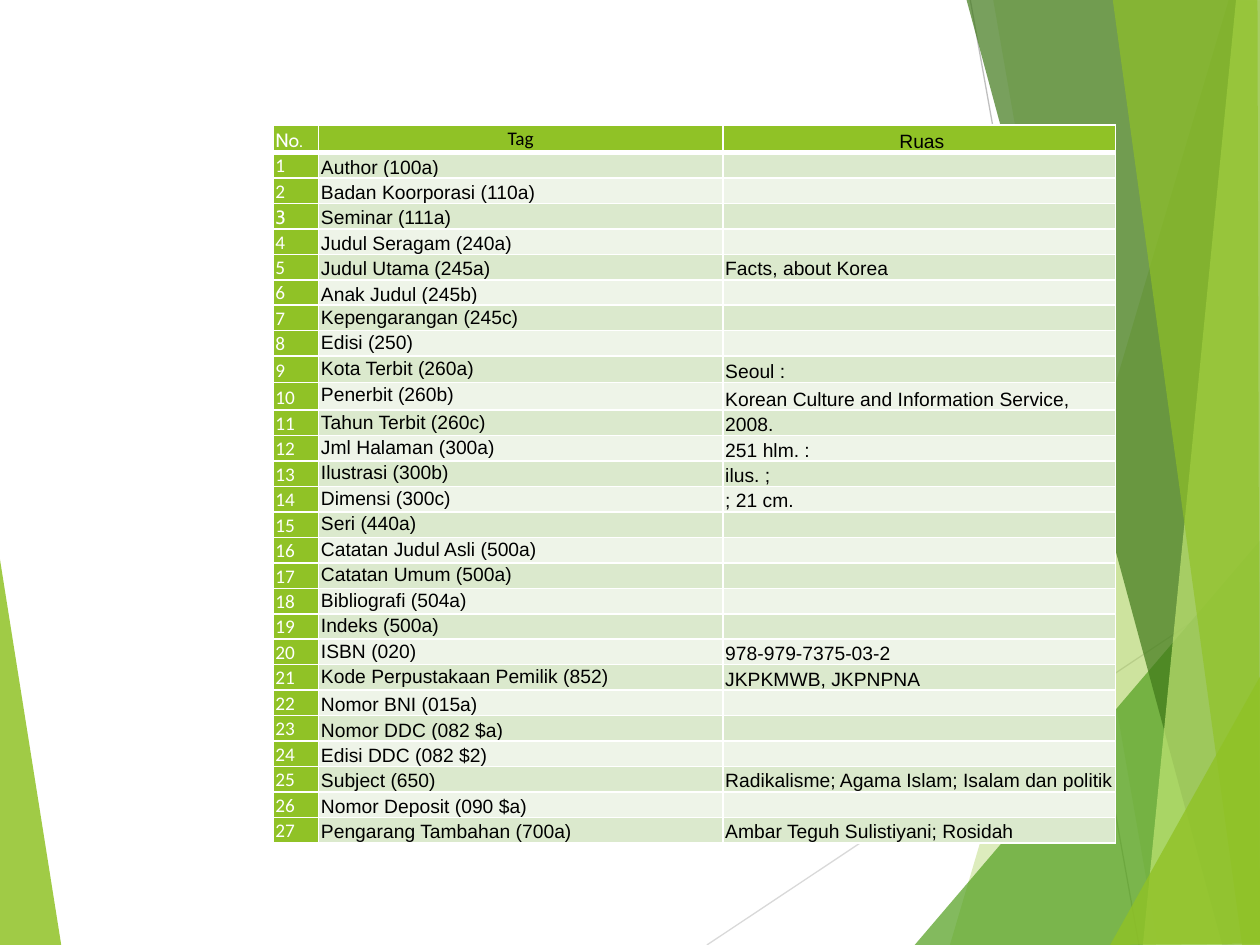
from lxml import etree
from pptx import Presentation
from pptx.dml.color import RGBColor
from pptx.enum import shapes, text
from pptx.oxml import ns
from pptx.util import Cm, Pt

GREEN, WHITE, BLACK = "90C226", "FFFFFF", "000000"
BANDS = ("DBE9CD", "EEF4E8")

# fill, opacity in percent, corners in cm
PANES = [
    (GREEN, 85, [(-0.02, 11.15), (1.24, 19.08), (-0.02, 19.05)]),
    (GREEN, 30, [(24.77, 0), (19.15, 19.05), (25.45, 19.08), (25.43, 0.02)]),
    (GREEN, 20, [(20.02, -0.02), (23.34, 19.05), (25.43, 19.05), (25.43, -0.02)]),
    ("54A021", 72, [(18.44, 19.05), (25.4, 10.9), (25.43, 19.05)]),
    ("3F7819", 70, [(19.48, -0.02), (24.64, 19.05), (25.43, 19.02), (25.43, -0.02)]),
    ("C0E474", 70, [(24.92, -0.02), (23.04, 19.05), (25.43, 19.05), (25.4, -0.02)]),
    (GREEN, 65, [(22.43, -0.02), (25.04, 19.05), (25.4, 19.05), (25.35, -0.02)]),
    (GREEN, 80, [(22.38, 19.05), (25.43, 13.59), (25.43, 19.02)]),
]
RAYS = [
    ("D9D9D9", (14.25, 19.05), (25.43, 11.61)),
    ("BFBFBF", (19.56, 0), (22.96, 19.05)),
]

HEAD = ("No.", "Tag", " Ruas")
TAGS = [
    "Author (100a)", "Badan Koorporasi (110a)", "Seminar (111a)",
    "Judul Seragam (240a)", "Judul Utama (245a)", "Anak Judul (245b)",
    "Kepengarangan (245c)", "Edisi (250)", "Kota Terbit (260a)",
    "Penerbit (260b)", "Tahun Terbit (260c)", "Jml Halaman (300a)",
    "Ilustrasi (300b)", "Dimensi (300c)", "Seri (440a)",
    "Catatan Judul Asli (500a)", "Catatan Umum (500a)", "Bibliografi (504a)",
    "Indeks (500a)", "ISBN (020)", "Kode Perpustakaan Pemilik (852)",
    "Nomor BNI (015a)", "Nomor DDC (082 $a)", "Edisi DDC (082 $2)",
    "Subject (650)", "Nomor Deposit (090 $a)", "Pengarang Tambahan (700a)",
]
FIELDS = {
    5: "Facts, about Korea",
    9: "Seoul :",
    10: "Korean Culture and Information Service,",
    11: "2008.",
    12: "251 hlm. :",
    13: "ilus. ;",
    14: "; 21 cm.",
    20: "978-979-7375-03-2",
    21: "JKPKMWB, JKPNPNA",
    25: "Radikalisme; Agama Islam; Isalam dan politik",
    27: "Ambar Teguh Sulistiyani; Rosidah",
}
COLS = (0.92, 8.15, 7.92)
HIGH = {0: 0.56, 9: 0.53, 10: 0.56}


def color(code):
    return RGBColor.from_string(code)


def child(node, tag, **attrs):
    return etree.SubElement(node, ns.qn("a:" + tag), attrs)


def pane(group, left, top, fill, alpha, points):
    spots = [(Cm(left + x), Cm(top + y)) for x, y in points]
    build = group.build_freeform(*spots[0])
    build.add_line_segments(spots[1:])
    shape = build.convert_to_shape()
    shape.shadow.inherit = False
    shape.fill.solid()
    shape.fill.fore_color.rgb = color(fill)
    tint = shape._element.spPr.find(".//" + ns.qn("a:srgbClr"))
    child(tint, "alpha", val=str(alpha * 1000))
    shape.line.fill.background()


def ray(group, left, top, tone, start, end):
    ends = [Cm(left + start[0]), Cm(top + start[1]), Cm(left + end[0]), Cm(top + end[1])]
    line = group.add_connector(shapes.MSO_CONNECTOR.STRAIGHT, *ends)
    line.line.color.rgb = color(tone)
    line.line.width = Pt(0.75)
    child(line._element.spPr, "effectLst")


def facets(slide, left, top):
    """Draw the translucent panes and fine rays behind the table."""
    group = slide.shapes.add_group_shape().shapes
    pane(group, left, top, *PANES[0])
    for item in RAYS:
        ray(group, left, top, *item)
    for item in PANES[1:]:
        pane(group, left, top, *item)


def border(cell, base):
    props = cell._tc.get_or_add_tcPr()
    for side, width in (("L", 1), ("R", 1), ("T", 1), ("B", base)):
        line = child(props, "ln" + side, w=str(Pt(width)))
        child(child(line, "solidFill"), "srgbClr", val=WHITE)


def style(cell, row, col):
    border(cell, 3 if row == 0 else 1)
    cell.fill.solid()
    green = row == 0 or col == 0
    cell.fill.fore_color.rgb = color(GREEN if green else BANDS[(row - 1) % 2])
    cell.margin_left = cell.margin_right = Cm(0.05)
    cell.margin_top = cell.margin_bottom = 0
    high = col == 1 and (row == 0 or 7 <= row <= 21)
    anchor = text.MSO_ANCHOR
    cell.vertical_anchor = anchor.TOP if high else anchor.BOTTOM


def write(cell, words, row, col):
    para = cell.text_frame.paragraphs[0]
    para.text = words
    para.line_spacing = 1.07
    if row == 0 and col > 0:
        para.alignment = text.PP_ALIGN.CENTER
    if col == 0:
        face = "Cabin" if row in (0, 3) else "Calibri"
    else:
        face = "Calibri" if (row, col) == (0, 1) else "Arial"
    for run in para.runs:
        run.font.size = Pt(11)
        run.font.name = face
        run.font.color.rgb = color(WHITE if col == 0 else BLACK)
    if not words:
        child(para._p, "endParaRPr", sz="1100")


def grid(slide, left, top):
    """Place the catalogue table with its header row."""
    rows = [HEAD] + [(str(n), tag, FIELDS.get(n, "")) for n, tag in enumerate(TAGS, 1)]
    highs = [HIGH.get(n, 0.48) for n in range(len(rows))]
    box = [Cm(left), Cm(top), Cm(sum(COLS)), Cm(sum(highs))]
    table = slide.shapes.add_table(len(rows), len(COLS), *box).table
    table.first_row = table.horz_banding = False
    for col, width in zip(table.columns, COLS):
        col.width = Cm(width)
    for r, (line, high) in enumerate(zip(rows, highs)):
        table.rows[r].height = Cm(high)
        for c, words in enumerate(line):
            cell = table.cell(r, c)
            style(cell, r, c)
            write(cell, words, r, c)


def main():
    deck = Presentation()
    deck.slide_width, deck.slide_height = Cm(25.4), Cm(19.05)
    slide = deck.slides.add_slide(deck.slide_layouts[6])
    facets(slide, 0, 0)
    grid(slide, 5.5, 2.52)
    deck.save("out.pptx")


if __name__ == "__main__":
    main()
